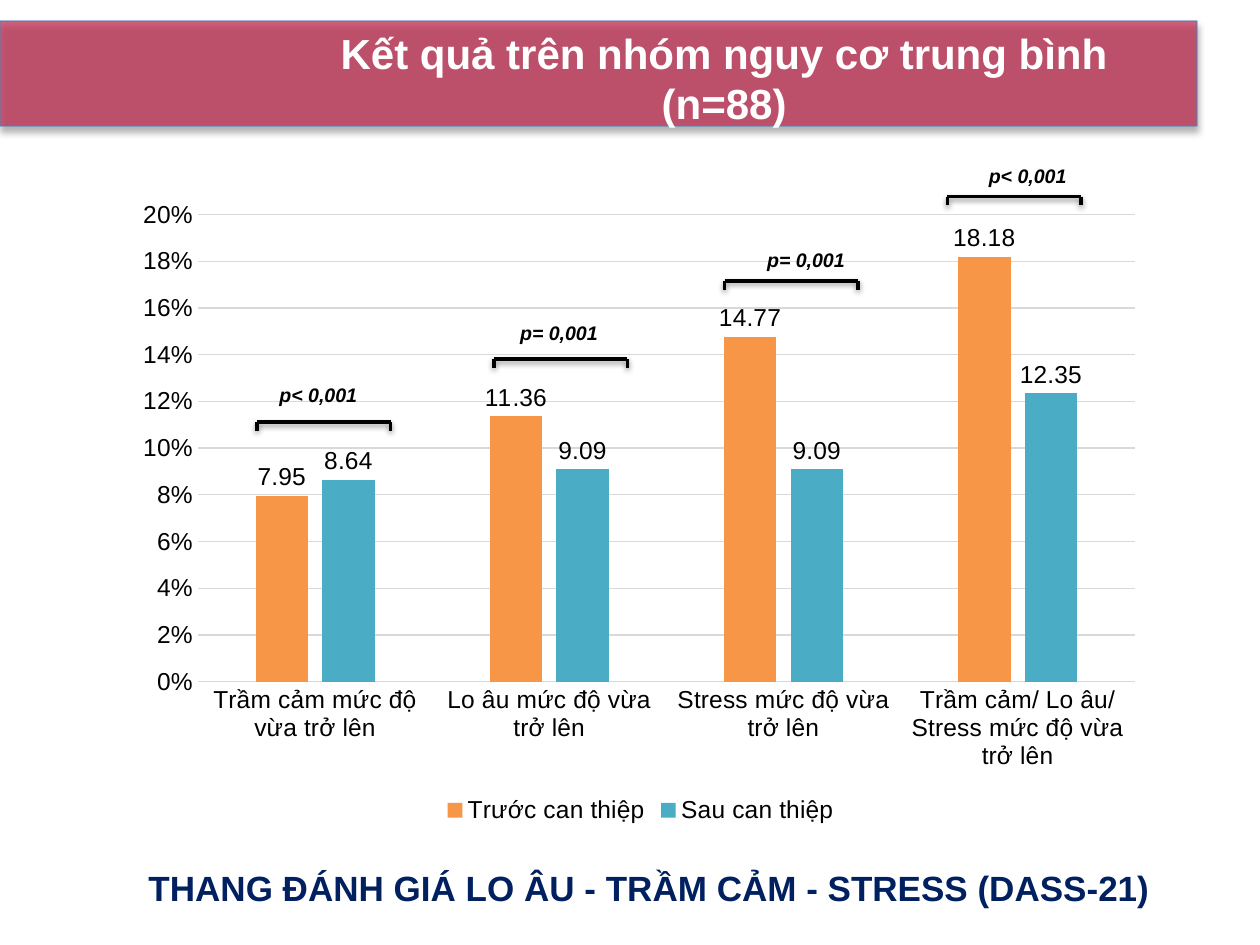
from dataclasses import dataclass

from lxml import etree
from pptx import Presentation
from pptx import util as u
from pptx.chart.data import CategoryChartData
from pptx.dml.color import RGBColor
from pptx.enum import chart as ch, shapes, text
from pptx.oxml.ns import qn


@dataclass(frozen=True)
class Theme:
    face: str = "Arial"
    rose: str = "C02F52"
    edge: str = "4B7EBC"
    navy: str = "002060"
    ink: str = "000000"
    paper: str = "FFFFFF"
    grid: str = "D9D9D9"
    bars: tuple = ("F79646", "4BACC6")
    head: float = 24
    foot: float = 20
    body: float = 14
    note: float = 11.2


T = Theme()
WIDE, HIGH = 10, 7.5
CATS = ("Trầm cảm mức độ vừa trở lên", "Lo âu mức độ vừa trở lên",
        "Stress mức độ vừa trở lên", "Trầm cảm/ Lo âu/ Stress mức độ vừa trở lên")
DATA = (("Trước can thiệp", (7.95, 11.36, 14.77, 18.18)),
        ("Sau can thiệp", (8.64, 9.09, 9.09, 12.35)))
MARKS = (("p< 0,001", 2.04, 3.35, 0.08, -0.36),
         ("p= 0,001", 3.92, 2.85, 0.11, -0.35),
         ("p= 0,001", 5.75, 2.23, 0.24, -0.31),
         ("p< 0,001", 7.52, 1.56, 0.23, -0.31))


def place(*box):
    return [u.Inches(n) for n in box]


def tint(color):
    return RGBColor.from_string(color)


def style(font, size, color, bold=False, slant=False):
    font.name, font.size = T.face, u.Pt(size)
    font.bold, font.italic = bold, slant
    font.color.rgb = tint(color)


def fade(node, share):
    color = node.find(".//" + qn("a:srgbClr"))
    etree.SubElement(color, qn("a:alpha")).set("val", str(share * 1000))


def shade(shape, share, blur, drop):
    props = shape.element.spPr
    for old in props.findall(qn("a:effectLst")):
        props.remove(old)
    effects = etree.SubElement(props, qn("a:effectLst"))
    outer = etree.SubElement(effects, qn("a:outerShdw"), blurRad=str(u.Pt(blur)),
                             dist=str(u.Pt(drop)), dir="5400000", rotWithShape="0")
    etree.SubElement(outer, qn("a:srgbClr"), val=T.ink)
    fade(outer, share)


def label(slide, words, box, size, color, slant=False):
    frame = slide.shapes.add_textbox(*place(*box)).text_frame
    frame.word_wrap = False
    frame.auto_size = text.MSO_AUTO_SIZE.SHAPE_TO_FIT_TEXT
    para = frame.paragraphs[0]
    para.text = words
    style(para.font, size, color, True, slant)


def header(slide, box):
    left, top, wide, high = box
    band = slide.shapes.add_shape(shapes.MSO_SHAPE.RECTANGLE, *place(*box))
    band.fill.solid()
    band.fill.fore_color.rgb = tint(T.rose)
    fade(band.element.spPr.find(qn("a:solidFill")), 75)
    band.line.color.rgb = tint(T.edge)
    band.line.width = u.Pt(0.75)
    fade(band.element.spPr.find(qn("a:ln")), 70)
    shade(band, 40, 4, 3)
    title = slide.shapes.title
    title.element.addprevious(band.element)
    title.left, title.top, title.width, title.height = place(
        left + wide * 0.27, top, wide * 0.67, high * 0.53)
    frame = title.text_frame
    frame.word_wrap = True
    frame.auto_size = text.MSO_AUTO_SIZE.NONE
    frame.vertical_anchor = text.MSO_ANCHOR.TOP
    para = frame.paragraphs[0]
    para.text = "Kết quả trên nhóm nguy cơ trung bình (n=88)"
    para.alignment = text.PP_ALIGN.CENTER
    style(para.font, T.head, T.paper, True)


def frame_plot(chart, **parts):
    area = chart.element.find(".//" + qn("c:plotArea"))
    for old in area.findall(qn("c:layout")):
        area.remove(old)
    layout = etree.Element(qn("c:layout"))
    area.insert(0, layout)
    manual = etree.SubElement(layout, qn("c:manualLayout"))
    rules = {"layoutTarget": "inner", "xMode": "edge", "yMode": "edge", **parts}
    for name, val in rules.items():
        etree.SubElement(manual, qn("c:" + name)).set("val", str(val))


def graph(slide, box):
    data = CategoryChartData(number_format="General")
    data.categories = CATS
    for name, vals in DATA:
        data.add_series(name, vals)
    chart = slide.shapes.add_chart(
        ch.XL_CHART_TYPE.COLUMN_CLUSTERED, *place(*box), data).chart
    chart.has_title = False
    style(chart.font, T.body, T.ink)
    chart.has_legend = True
    chart.legend.position = ch.XL_LEGEND_POSITION.BOTTOM
    chart.legend.include_in_layout = False
    style(chart.legend.font, T.body, T.ink)
    frame_plot(chart, x=0.07, y=0.04, w=0.91, h=0.73)

    cat, val = chart.category_axis, chart.value_axis
    for axis in (cat, val):
        axis.major_tick_mark = axis.minor_tick_mark = ch.XL_TICK_MARK.NONE
        style(axis.tick_labels.font, T.body, T.ink)
    val.minimum_scale, val.maximum_scale, val.major_unit = 0, 20, 2
    val.tick_labels.number_format = '#,##0"%"'
    val.tick_labels.number_format_is_linked = False
    val.format.line.fill.background()
    val.has_major_gridlines = True
    for line in (cat.format.line, val.major_gridlines.format.line):
        line.color.rgb = tint(T.grid)
        line.width = u.Pt(0.75)

    plot = chart.plots[0]
    plot.vary_by_categories = False
    plot.gap_width, plot.overlap = 219, -27
    for series, color in zip(plot.series, T.bars):
        series.format.fill.solid()
        series.format.fill.fore_color.rgb = tint(color)
        tags = series.data_labels
        tags.show_value = True
        tags.position = ch.XL_LABEL_POSITION.OUTSIDE_END
        style(tags.font, T.body, T.ink)


def bracket(slide, words, left, top, shift, rise):
    right, low = left + 1.06, top + 0.07
    for ends in ((left, top, right, top), (right, top, right, low),
                 (left, top, left, low)):
        line = slide.shapes.add_connector(shapes.MSO_CONNECTOR.STRAIGHT, *place(*ends))
        line.line.color.rgb = tint(T.ink)
        line.line.width = u.Pt(2)
        shade(line, 38, 3.1, 1.6)
    label(slide, words, (left + shift, top + rise, 0.83, 0.29), T.note, T.ink, True)


def main():
    deck = Presentation()
    deck.slide_width, deck.slide_height = place(WIDE, HIGH)
    slide = deck.slides.add_slide(deck.slide_layouts[5])
    header(slide, (0, HIGH / 45, WIDE * 0.95, HIGH / 9))
    label(slide, "THANG ĐÁNH GIÁ LO ÂU - TRẦM CẢM - STRESS (DASS-21)",
          (1.08, 6.83, 8.22, 0.44), T.foot, T.navy)
    graph(slide, (WIDE * 0.1, HIGH * 0.2, 8.17, 5.08))
    for mark in MARKS:
        bracket(slide, *mark)
    deck.save("out.pptx")


if __name__ == "__main__":
    main()
